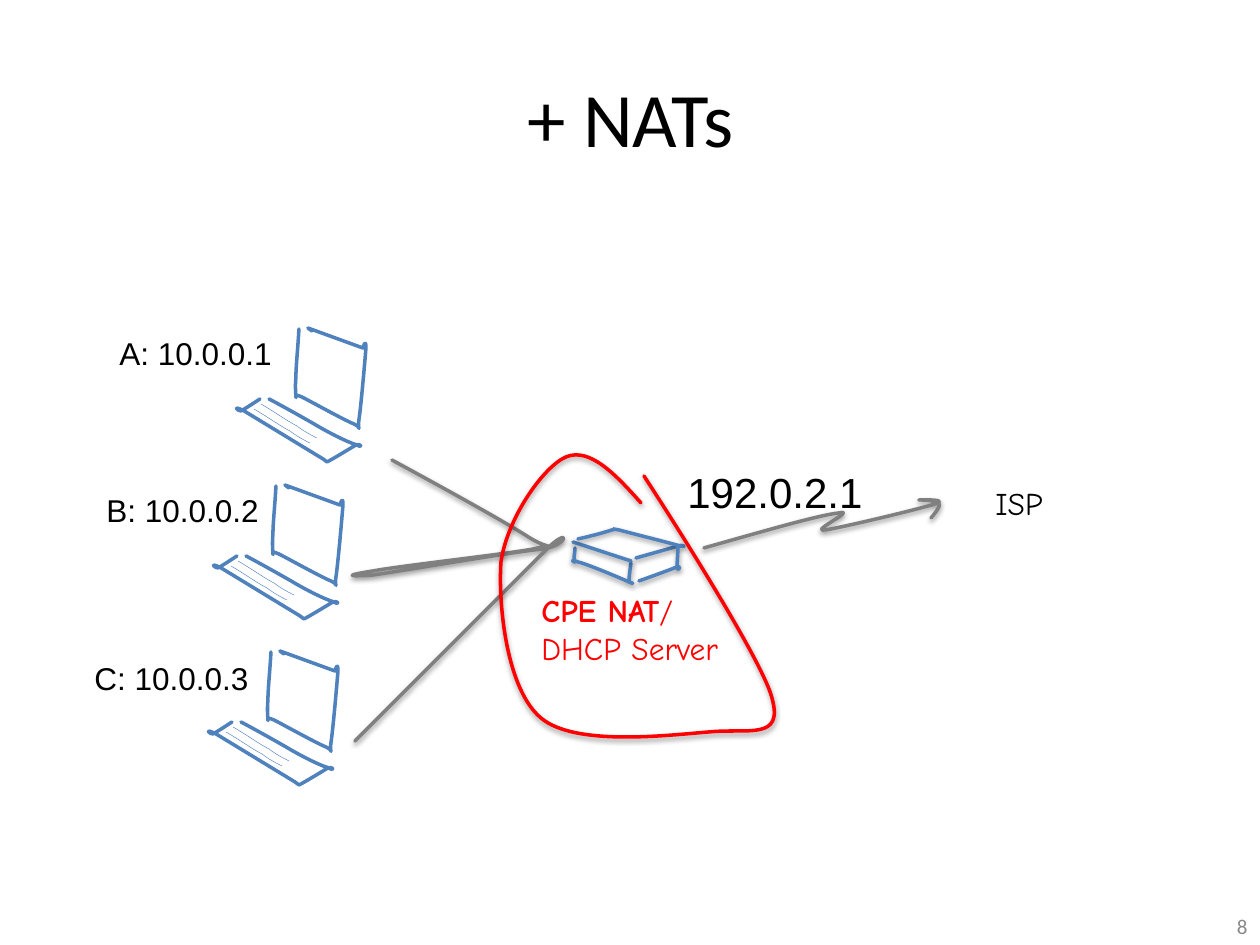
from dataclasses import dataclass

from lxml import etree
from pptx import Presentation
from pptx.dml.color import RGBColor
from pptx.enum.text import MSO_ANCHOR, MSO_AUTO_SIZE, PP_ALIGN
from pptx.oxml.ns import qn
from pptx.util import Pt

SCALE = 914400 / 126  # EMU in one px
LEFT, CENTER, RIGHT = PP_ALIGN.LEFT, PP_ALIGN.CENTER, PP_ALIGN.RIGHT
TOP, MIDDLE = MSO_ANCHOR.TOP, MSO_ANCHOR.MIDDLE
GROW = MSO_AUTO_SIZE.SHAPE_TO_FIT_TEXT


@dataclass(frozen=True)
class Theme:
    black: str = "000000"
    blue: str = "4F81BD"
    gray: str = "808080"
    pale: str = "898989"
    red: str = "FF0000"
    head: str = "Calibri"
    plain: str = "Arial"
    hand: str = "Comic Neue"
    title: int = 44
    large: int = 24
    body: int = 18
    small: int = 12
    thick: float = 2
    thin: float = 0.25


THEME = Theme()

# Strokes: a start point, then lines (x, y) and curves (two controls and an end).
SCREEN = [
    (63, 1), (62, 20, 60, 38, 60, 49), (59, 60, 60, 66, 60, 69),
    (62, 72, 55, 64, 66, 69), (74, 73, 108, 92, 118, 96),
    (127, 100, 121, 105, 123, 92), (125, 79, 129, 33, 130, 20),
    (130, 9, 127, 20, 127, 20), (72, 0), (76, 3),
]
BASE = [
    (33, 71), (48, 79, 64, 88, 78, 96), (93, 105, 113, 115, 121, 117),
    (127, 121, 125, 115, 120, 117), (115, 120, 97, 131, 91, 134),
    (87, 131), (8, 83), (-6, 76, 3, 84, 5, 83), (9, 81, 24, 71, 24, 71),
]
KEYS = [(18, 81), (32, 89, 44, 98, 54, 103), (63, 110, 74, 115, 74, 115)]
KEY_STEP = (7, -5)
ROUTER = [
    [(575, 548), (575, 553, 573, 559, 575, 562), (575, 563, 568, 558, 578, 562),
     (587, 564, 620, 578, 629, 582), (638, 585, 629, 583, 629, 581),
     (629, 577, 631, 563, 631, 563)],
    [(573, 542), (631, 561)],
    [(636, 558), (675, 547)],
    [(578, 539), (592, 536, 606, 532, 612, 530), (620, 529, 607, 528, 619, 530),
     (630, 533, 670, 543, 680, 546), (690, 548, 679, 543, 678, 547),
     (678, 551, 677, 566, 677, 568), (677, 572, 683, 566, 677, 567),
     (670, 570, 639, 581, 639, 581)],
]
LINKS = [
    (392, 460), (449, 491, 507, 523, 530, 538), (553, 552, 559, 543, 533, 549),
    (507, 554, 399, 566, 373, 571), (347, 575, 344, 577, 373, 575),
    (401, 571, 513, 552, 542, 549), (570, 546, 572, 522, 542, 554),
    (510, 586, 355, 741, 355, 741),
]
UPLINK = [
    (704, 548), (761, 532, 819, 515, 839, 513), (858, 509, 809, 532, 825, 530),
    (840, 528, 920, 509, 935, 504), (951, 499, 919, 500, 919, 500),
    (920, 500, 937, 500, 939, 504), (941, 507, 931, 518, 931, 518),
]
RING = [
    (641, 503), (616, 475, 590, 447, 566, 457), (543, 467, 507, 519, 501, 562),
    (498, 606, 507, 690, 541, 718), (575, 747, 670, 735, 709, 732),
    (748, 728, 784, 741, 772, 698), (761, 655, 644, 476, 644, 476),
]
HOSTS = [  # name, label corner, laptop corner
    ("A: 10.0.0.1", (107, 328), (236, 328)),
    ("B: 10.0.0.2", (94, 485), (213, 485)),
    ("C: 10.0.0.3", (82, 653), (208, 651)),
]


def px(n):
    return round(n * SCALE)


def rgb(color):
    return RGBColor.from_string(color)


def add_shade(shape):
    effects = shape.element.spPr.find(qn("a:effectLst"))
    shade = etree.SubElement(effects, qn("a:outerShdw"), blurRad=str(Pt(3.1)),
                             dist=str(Pt(1.6)), dir="5400000", rotWithShape="0")
    tint = etree.SubElement(shade, qn("a:srgbClr"), val=THEME.black)
    etree.SubElement(tint, qn("a:alpha"), val="38000")


def bend(shape, steps):
    """Turn each run of three line segments that stands for a curve into one."""
    track = next(shape.element.iter(qn("a:path")))
    lines = iter(track.findall(qn("a:lnTo")))
    for step in steps:
        parts = [next(lines) for _ in range(len(step) // 2)]
        if len(parts) == 3:
            curve = etree.Element(qn("a:cubicBezTo"))
            parts[0].addprevious(curve)
            for part in parts:
                curve.append(part[0])
                track.remove(part)


def add_stroke(shapes, stroke, color, width=THEME.thick, at=(0, 0), shade=True):
    left, top = at
    points = [(left + step[i], top + step[i + 1])
              for step in stroke for i in range(0, len(step), 2)]
    pen = shapes.build_freeform(*points[0], scale=SCALE)
    pen.add_line_segments(points[1:], close=False)
    shape = pen.convert_to_shape()
    bend(shape, stroke[1:])
    shape.fill.background()
    shape.line.color.rgb = rgb(color)
    shape.line.width = Pt(width)
    line = shape.element.spPr.find(qn("a:ln"))
    line.set("cap", "rnd")
    etree.SubElement(line, qn("a:round"))
    shape.shadow.inherit = False
    if shade:
        add_shade(shape)


def add_laptop(slide, left, top):
    shapes = slide.shapes.add_group_shape().shapes
    for stroke in (SCREEN, BASE):
        add_stroke(shapes, stroke, THEME.blue, at=(left, top), shade=False)
    for i in range(2):
        spot = (left + i * KEY_STEP[0], top + i * KEY_STEP[1])
        add_stroke(shapes, KEYS, THEME.blue, THEME.thin, spot, shade=False)


def add_router(slide):
    shapes = slide.shapes.add_group_shape().shapes
    for stroke in ROUTER:
        add_stroke(shapes, stroke, THEME.blue)


def add_text(slide, box, lines, font, size, color=THEME.black,
             align=LEFT, anchor=TOP, grow=True):
    """Each line is a list of (text, bold) runs."""
    frame = slide.shapes.add_textbox(*map(px, box)).text_frame
    frame.word_wrap = not grow
    if grow:
        frame.auto_size = GROW
    frame.vertical_anchor = anchor
    for i, runs in enumerate(lines):
        para = frame.add_paragraph() if i else frame.paragraphs[0]
        para.alignment = align
        for text, bold in runs:
            run = para.add_run()
            run.text = text
            run.font.name = font
            run.font.size = Pt(size)
            run.font.bold = bold
            run.font.color.rgb = rgb(color)


def main():
    deck = Presentation()
    deck.slide_width, deck.slide_height = px(1260), px(945)
    slide = deck.slides.add_slide(deck.slide_layouts[6])

    add_text(slide, (37, 38, 1187, 158), [[("+ NATs", False)]], THEME.head,
             THEME.title, align=CENTER, anchor=MIDDLE, grow=False)
    add_text(slide, (966, 901, 294, 50), [[("8", False)]], THEME.head,
             THEME.small, THEME.pale, RIGHT, MIDDLE, grow=False)
    for name, spot, corner in HOSTS:
        add_laptop(slide, *corner)
        add_text(slide, (*spot, 181, 50), [[(name, False)]], THEME.plain, THEME.body)
    add_router(slide)
    add_stroke(slide.shapes, LINKS, THEME.gray)
    add_text(slide, (529, 585, 253, 127),
             [[("CPE NAT", True), ("/", False)], [("DHCP Server", False)]],
             THEME.hand, THEME.body, THEME.red)
    add_stroke(slide.shapes, UPLINK, THEME.gray)
    add_text(slide, (675, 460, 203, 63), [[("192.0.2.1", False)]],
             THEME.plain, THEME.large)
    add_text(slide, (983, 478, 87, 50), [[("ISP", False)]], THEME.hand, THEME.body)
    add_stroke(slide.shapes, RING, THEME.red)
    deck.save("out.pptx")


if __name__ == "__main__":
    main()
